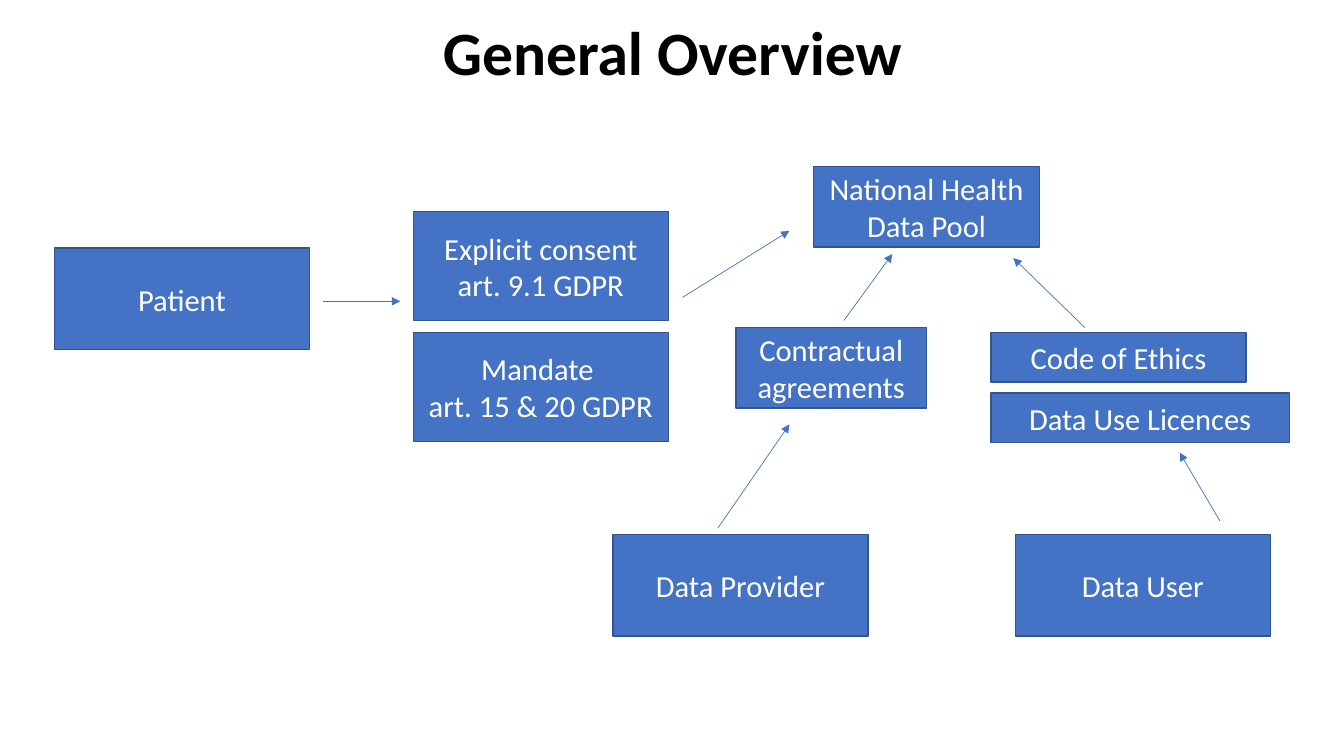
from lxml import etree
from pptx import Presentation
from pptx import util as u
from pptx.dml.color import RGBColor
from pptx.enum import shapes, text
from pptx.oxml import ns

PX = 9144  # EMU; 100 px to the inch
COLOURS = {"fill": "4472C4", "border": "325491", "label": "FFFFFF", "title": "000000"}

BOX_WIDTH = 253
PARTY_HEIGHT = 101
CONSENT_HEIGHT = 108
HUB_HEIGHT = 80
TERMS_HEIGHT = 49

# label, left, top, width, height
BOXES = [
    ("National Health Data Pool", 807, 165, 224, HUB_HEIGHT),
    ("Patient", 54, 246, BOX_WIDTH, PARTY_HEIGHT),
    ("Explicit consent\nart. 9.1 GDPR", 410, 210, BOX_WIDTH, CONSENT_HEIGHT),
    ("Mandate \nart. 15 & 20 GDPR", 410, 330, BOX_WIDTH, CONSENT_HEIGHT),
    ("Data Provider", 608, 530, BOX_WIDTH, PARTY_HEIGHT),
    ("Contractual agreements", 730, 325, 189, HUB_HEIGHT),
    ("Data User", 1007, 530, BOX_WIDTH, PARTY_HEIGHT),
    ("Code of Ethics", 983, 330, BOX_WIDTH, TERMS_HEIGHT),
    ("Data Use Licences", 983, 390, 296, TERMS_HEIGHT),
]

# start x, start y, end x, end y
ARROWS = [
    (320, 299, 397, 299),   # patient to consent
    (677, 295, 783, 229),   # consent to hub
    (712, 524, 783, 421),   # provider to agreements
    (1210, 517, 1170, 449), # user to licences
    (837, 318, 885, 252),   # agreements to hub
    (1076, 325, 1005, 256), # ethics to hub
]


class Diagram:
    font_name = "Calibri"
    label_size = 21.8
    title_size = 44

    def __init__(self, slide):
        self.slide = slide

    def colour(self, name):
        return RGBColor.from_string(COLOURS[name])

    def style(self, paragraph, size, colour, bold=False):
        paragraph.alignment = text.PP_ALIGN.CENTER
        font = paragraph.font
        font.name, font.size, font.bold = self.font_name, u.Pt(size), bold
        font.color.rgb = self.colour(colour)

    def title(self, wording, left, top, width, height):
        shape = self.slide.shapes.title
        shape.left, shape.top, shape.width, shape.height = (
            length * PX for length in (left, top, width, height))
        frame = shape.text_frame
        frame.text = wording
        frame.auto_size = text.MSO_AUTO_SIZE.NONE
        frame.vertical_anchor = text.MSO_ANCHOR.MIDDLE
        paragraph = frame.paragraphs[0]
        paragraph.line_spacing = 0.9
        self.style(paragraph, self.title_size, "title", bold=True)

    def box(self, label, *bounds):
        shape = self.slide.shapes.add_shape(
            shapes.MSO_SHAPE.RECTANGLE, *(length * PX for length in bounds))
        shape.shadow.inherit = False
        shape.fill.solid()
        shape.fill.fore_color.rgb = self.colour("fill")
        shape.line.color.rgb = self.colour("border")
        shape.line.width = u.Pt(1)
        frame = shape.text_frame
        frame.word_wrap = True
        frame.vertical_anchor = text.MSO_ANCHOR.MIDDLE
        frame.text = label
        for paragraph in frame.paragraphs:
            self.style(paragraph, self.label_size, "label")

    def arrow(self, *ends):
        connector = self.slide.shapes.add_connector(
            shapes.MSO_CONNECTOR.STRAIGHT, *(length * PX for length in ends))
        connector.line.color.rgb = self.colour("fill")
        connector.line.width = u.Pt(0.5)
        properties = connector._element.spPr
        etree.SubElement(properties.find(ns.qn("a:ln")), ns.qn("a:tailEnd"), type="triangle")
        etree.SubElement(properties, ns.qn("a:effectLst"))


def main():
    presentation = Presentation()
    presentation.slide_width, presentation.slide_height = 1333 * PX, 750 * PX
    diagram = Diagram(presentation.slides.add_slide(presentation.slide_layouts[5]))
    diagram.title("General Overview", 92, 15, 1150, 80)
    for box in BOXES:
        diagram.box(*box)
    for arrow in ARROWS:
        diagram.arrow(*arrow)
    presentation.save("out.pptx")


if __name__ == "__main__":
    main()
